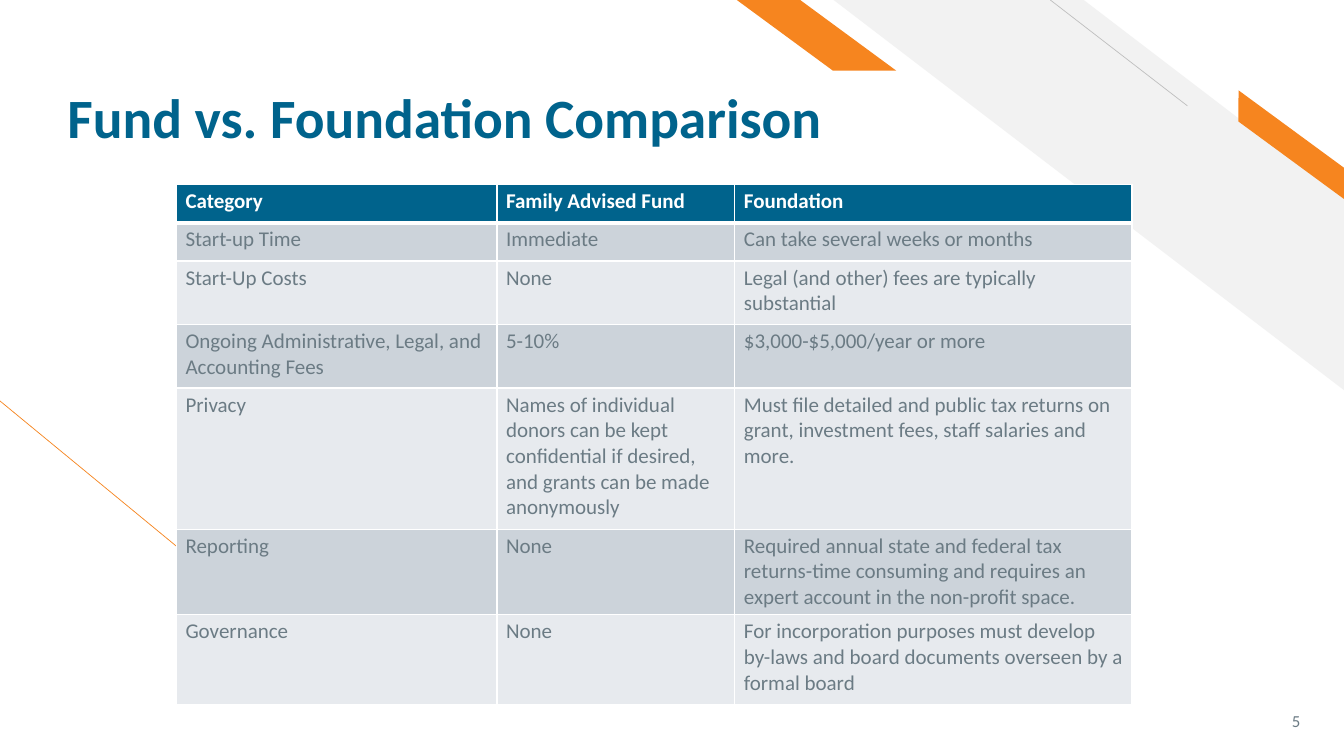
from dataclasses import dataclass

from lxml import etree
from pptx import Presentation
from pptx import util as u
from pptx.dml.color import RGBColor
from pptx.enum import shapes, text
from pptx.oxml import ns

SLIDE_WIDTH, SLIDE_HEIGHT = u.Inches(13.33), u.Inches(7.5)


@dataclass(frozen=True)
class Theme:
    """Colours, font and type sizes of the slide."""
    font: str = "Calibri"
    blue: str = "00638C"
    orange: str = "F6851F"
    pale: str = "F2F2F2"
    line_grey: str = "BFBFBF"
    body: str = "6B7B84"
    white: str = "FFFFFF"
    bands: tuple = ("CCD3DA", "E7EAEE")
    title_size: float = 39.6
    table_size: float = 15
    number_size: float = 12
    hairline: float = 0.5
    border: float = 1
    header_border: float = 3


THEME = Theme()

COLUMN_SHARES = (23.85, 17.7, 29.55)
ROW_SHARES = (5.07, 5.07, 8.4, 8.4, 18.67, 11.33, 11.87)
COMPARISON = (
    ("Category", "Family Advised Fund", "Foundation"),
    ("Start-up Time", "Immediate", "Can take several weeks or months"),
    ("Start-Up Costs", "None", "Legal (and other) fees are typically substantial"),
    ("Ongoing Administrative, Legal, and Accounting Fees", "5-10%",
     "$3,000-$5,000/year or more"),
    ("Privacy",
     "Names of individual donors can be kept confidential if desired, "
     "and grants can be made anonymously",
     "Must file detailed and public tax returns on grant, investment fees, "
     "staff salaries and more."),
    ("Reporting", "None",
     "Required annual state and federal tax returns-time consuming and requires "
     "an expert account in the non-profit space."),
    ("Governance", "None",
     "For incorporation purposes must develop by-laws and board documents "
     "overseen by a formal board"),
)


def across(percent):
    """Turn a percentage of the slide width into a length."""
    return u.Emu(round(SLIDE_WIDTH * percent / 100))


def down(percent):
    """Turn a percentage of the slide height into a length."""
    return u.Emu(round(SLIDE_HEIGHT * percent / 100))


def place(left, top, width, height):
    """Turn a box given in percentages into lengths."""
    return across(left), down(top), across(width), down(height)


def colour(value):
    """Make a colour from its hexadecimal value."""
    return RGBColor.from_string(value)


def style_font(paragraph, size, shade, bold=False):
    """Format all runs of a paragraph."""
    for run in paragraph.runs:
        run.font.name = THEME.font
        run.font.size = u.Pt(size)
        run.font.bold = bold
        run.font.color.rgb = colour(shade)


def add_stripe(slide, preset, box, adjustment, fill, rotation=0):
    """Add a mirrored decorative stripe without outline."""
    shape = slide.shapes.add_shape(preset, *place(*box))
    shape.shadow.inherit = False
    shape.adjustments[0] = adjustment
    shape.fill.solid()
    shape.fill.fore_color.rgb = colour(fill)
    shape.line.fill.background()
    shape.rotation = rotation
    shape._element.spPr.xfrm.set("flipH", "1")


def add_hairline(slide, start, end, shade):
    """Add a thin straight line between two points."""
    connector = slide.shapes.add_connector(
        shapes.MSO_CONNECTOR.STRAIGHT,
        across(start[0]), down(start[1]), across(end[0]), down(end[1]))
    connector.line.width = u.Pt(THEME.hairline)
    connector.line.color.rgb = colour(shade)
    etree.SubElement(connector._element.spPr, ns.qn("a:effectLst"))


def add_label(slide, box, wording, size, shade, anchor, bold=False):
    """Add a one-line text box and return its paragraph."""
    text_frame = slide.shapes.add_textbox(*place(*box)).text_frame
    text_frame.word_wrap = True
    text_frame.vertical_anchor = anchor
    text_frame.margin_bottom = 0 if bold else u.Inches(0.05)
    text_frame.text = wording
    paragraph = text_frame.paragraphs[0]
    style_font(paragraph, size, shade, bold)
    return paragraph


def set_borders(cell, top, bottom):
    """Give a cell white borders with its own top and bottom widths."""
    properties = cell._tc.get_or_add_tcPr()
    widths = {"lnL": THEME.border, "lnR": THEME.border, "lnT": top, "lnB": bottom}
    for side, width in widths.items():
        line = etree.SubElement(properties, ns.qn(f"a:{side}"), w=str(u.Pt(width)))
        fill = etree.SubElement(line, ns.qn("a:solidFill"))
        etree.SubElement(fill, ns.qn("a:srgbClr"), val=THEME.white)


def fill_cell(cell, wording, row):
    """Write and format one cell according to its row."""
    header = row == 0
    set_borders(cell,
                THEME.header_border if row == 1 else THEME.border,
                THEME.header_border if header else THEME.border)
    cell.fill.solid()
    cell.fill.fore_color.rgb = colour(THEME.blue if header else THEME.bands[(row - 1) % 2])
    cell.margin_left = cell.margin_right = u.Inches(0.09)
    cell.margin_top = cell.margin_bottom = u.Inches(0.04)
    cell.text_frame.text = wording
    style_font(cell.text_frame.paragraphs[0], THEME.table_size,
               THEME.white if header else THEME.body, header)


def add_comparison(slide, left, top):
    """Add the comparison table."""
    box = place(left, top, sum(COLUMN_SHARES), sum(ROW_SHARES))
    table = slide.shapes.add_table(len(ROW_SHARES), len(COLUMN_SHARES), *box).table
    for column, share in zip(table.columns, COLUMN_SHARES):
        column.width = across(share)
    for row, share in zip(table.rows, ROW_SHARES):
        row.height = down(share)
    for row, wordings in enumerate(COMPARISON):
        for column, wording in enumerate(wordings):
            fill_cell(table.cell(row, column), wording, row)


def add_decoration(slide):
    """Add the stripes and thin lines behind the content."""
    preset = shapes.MSO_SHAPE
    add_hairline(slide, (15.6, 75.87), (0, 53.04), THEME.orange)
    add_stripe(slide, preset.DIAGONAL_STRIPE, (62.03, 0, 37.97, 51.6), 0.51, THEME.pale)
    add_hairline(slide, (88.35, 14), (78.15, 0), THEME.line_grey)
    add_stripe(slide, preset.PARALLELOGRAM, (90.53, 17.47, 11.1, 3.33), 0.72,
               THEME.orange, 36.3)
    add_stripe(slide, preset.PARALLELOGRAM, (54.83, 0, 11.85, 9.33), 1.36, THEME.orange)


def main():
    """Build and save the slide."""
    presentation = Presentation()
    presentation.slide_width, presentation.slide_height = SLIDE_WIDTH, SLIDE_HEIGHT
    slide = presentation.slides.add_slide(presentation.slide_layouts[6])
    add_decoration(slide)
    number = add_label(slide, (91.42, 92.67, 6.08, 5.33), "5", THEME.number_size,
                       THEME.body, text.MSO_ANCHOR.MIDDLE)
    number.alignment = text.PP_ALIGN.RIGHT
    number.space_after = u.Pt(6)
    title = add_label(slide, (4.28, 3.07, 68.34, 16.8), "Fund vs. Foundation Comparison",
                      THEME.title_size, THEME.blue, text.MSO_ANCHOR.BOTTOM, bold=True)
    title.line_spacing = 0.9
    add_comparison(slide, 13.13, 24.4)
    presentation.save("out.pptx")


if __name__ == "__main__":
    main()
